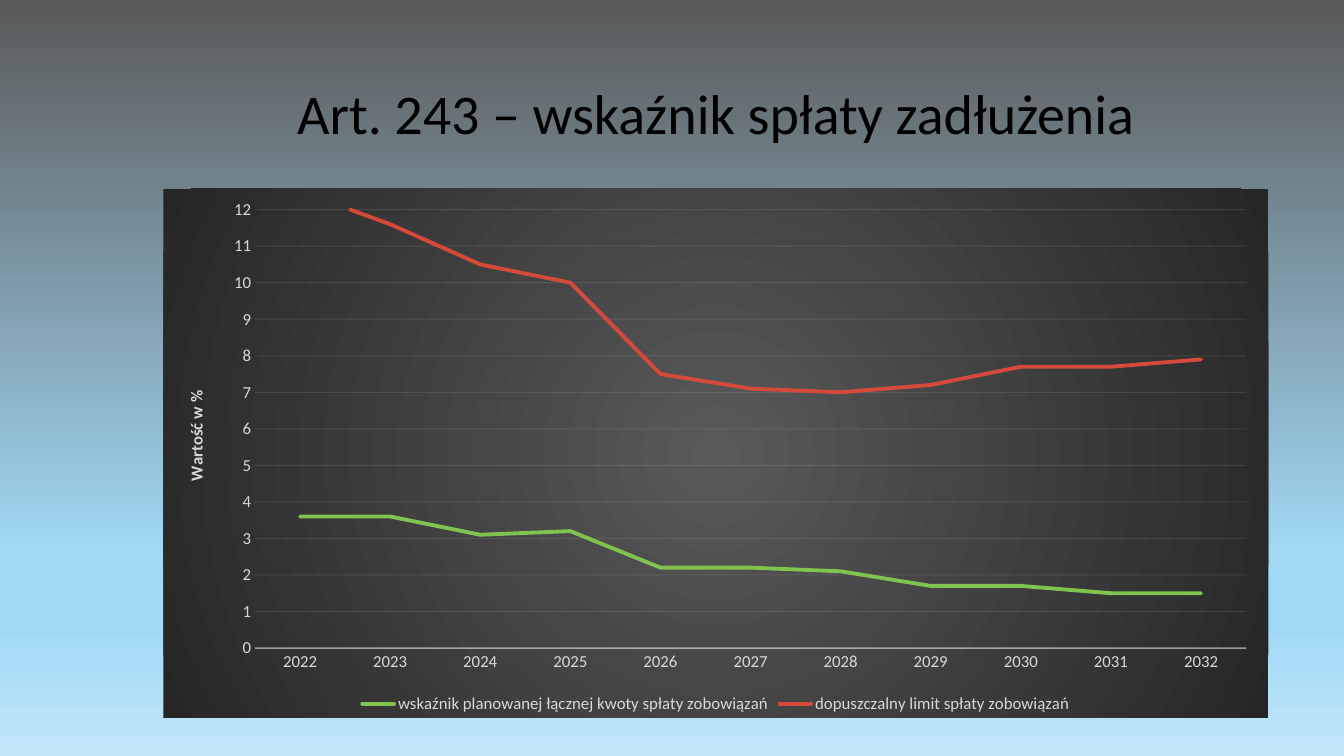
import copy
import lxml.etree
import pptx
import pptx.chart.axis
import pptx.chart.data
import pptx.dml.color
import pptx.enum.chart
import pptx.enum.text
import pptx.oxml
import pptx.oxml.ns
import pptx.util

Inches, Pt = pptx.util.Inches, pptx.util.Pt
qn = pptx.oxml.ns.qn
FONT = "Calibri"
COLORS = {
    "title": "000000", "label": "D9D9D9", "rule": "F2F2F2",
    "plan": "80C34F", "limit": "D64A3B",
    "dark": "595959", "black": "262626", "sky": "A2DAF6", "pale": "C1E6F9",
}
YEARS = [str(year) for year in range(2022, 2033)]
SERIES = [
    ("wskaźnik planowanej łącznej kwoty spłaty zobowiązań", "plan",
     (3.6, 3.6, 3.1, 3.2, 2.2, 2.2, 2.1, 1.7, 1.7, 1.5, 1.5)),
    ("dopuszczalny limit spłaty zobowiązań", "limit",
     (8.9, 8, 7.4, 6.8, 5.3, 4.9, 4.9, 5.5, 6, 6.2, 6.4)),
]


def rgb(name):
    return pptx.dml.color.RGBColor.from_string(COLORS[name])


def style(font, size, color, bold=False):
    font.name, font.size, font.bold = FONT, Pt(size), bold
    font.color.rgb = rgb(color)


def grad(stops, shade):
    """Gradient fill element from (percent, color) stops."""
    marks = "".join(f'<a:gs pos="{pos * 1000}"><a:srgbClr val="{COLORS[name]}"/></a:gs>'
                    for pos, name in stops)
    return pptx.oxml.parse_xml(
        f'<a:gradFill {pptx.oxml.ns.nsdecls("a")} rotWithShape="1">'
        f'<a:gsLst>{marks}</a:gsLst>{shade}</a:gradFill>')


def rule(line, width, alpha):
    """Pale line with the given opacity in percent."""
    line.width = Pt(width)
    line.color.rgb = rgb("rule")
    tint = next(line.fill._xPr.iter(qn("a:srgbClr")))
    lxml.etree.SubElement(tint, qn("a:alpha"), val=str(alpha * 1000))


def backdrop(slide):
    fill = slide.background.fill
    fill.gradient()
    old = next(slide.element.iter(qn("a:gradFill")))
    stops = [(0, "dark"), (74, "sky"), (83, "sky"), (100, "pale")]
    old.getparent().replace(old, grad(stops, '<a:lin ang="5400000" scaled="0"/>'))


def title(slide, box):
    frame = slide.shapes.add_textbox(*box).text_frame
    frame.word_wrap = True
    frame.vertical_anchor = pptx.enum.text.MSO_ANCHOR.MIDDLE
    para = frame.paragraphs[0]
    para.alignment = pptx.enum.text.PP_ALIGN.CENTER
    run = para.add_run()
    run.text = "Art. 243 – wskaźnik spłaty zadłużenia"
    style(run.font, 40, "title")


def second(chart):
    """Move the last series to a hidden second pair of axes."""
    area = chart._chartSpace.chart.plotArea
    first = area.find(qn("c:lineChart"))
    extra = copy.deepcopy(first)
    first.remove(first.findall(qn("c:ser"))[1])
    extra.remove(extra.findall(qn("c:ser"))[0])
    first.addnext(extra)
    pair = [copy.deepcopy(area.find(qn(tag))) for tag in ("c:catAx", "c:valAx")]
    area.findall(qn("c:valAx"))[-1].addnext(pair[0])
    pair[0].addnext(pair[1])
    ids = {}
    for num, axis in enumerate(pair):
        ids[axis.find(qn("c:axId")).get("val")] = str(5001 + num)
    for part in [extra] + pair:
        for tag in ("c:axId", "c:crossAx"):
            for ref in part.findall(qn(tag)):
                ref.set("val", ids[ref.get("val")])
    right = pptx.chart.axis.ValueAxis(pair[1])
    right.maximum_scale, right.major_unit = 16, 1
    right.has_major_gridlines = False
    pair[1].find(qn("c:axPos")).set("val", "r")
    pair[1].find(qn("c:crosses")).set("val", "max")
    for axis in (right, pptx.chart.axis.CategoryAxis(pair[0])):
        axis.visible = False


def layout(chart, **sides):
    """Place the inner plot area by fractions of the chart."""
    area = chart._chartSpace.chart.plotArea
    for old in area.findall(qn("c:layout")):
        area.remove(old)
    parts = '<c:layoutTarget val="inner"/><c:xMode val="edge"/><c:yMode val="edge"/>'
    parts += "".join(f'<c:{key} val="{val:.4f}"/>' for key, val in sides.items())
    area.insert(0, pptx.oxml.parse_xml(
        f'<c:layout {pptx.oxml.ns.nsdecls("c")}>'
        f'<c:manualLayout>{parts}</c:manualLayout></c:layout>'))


def panel(chart):
    """Dark radial fill behind the whole chart."""
    props = pptx.oxml.parse_xml(f'<c:spPr {pptx.oxml.ns.nsdecls("c", "a")}>'
                                '<a:ln><a:noFill/></a:ln></c:spPr>')
    shade = ('<a:path path="circle">'
             '<a:fillToRect l="50000" t="50000" r="50000" b="50000"/></a:path>')
    props.insert(0, grad([(0, "dark"), (100, "black")], shade))
    chart._chartSpace.chart.addnext(props)


def graph(slide, box):
    data = pptx.chart.data.CategoryChartData()
    data.categories = YEARS
    for name, _, vals in SERIES:
        data.add_series(name, vals)
    kind = pptx.enum.chart.XL_CHART_TYPE.LINE_STACKED
    chart = slide.shapes.add_chart(kind, *box, data).chart
    chart.has_title = False
    style(chart.font, 10, "title")
    # The main axes are taken before the second pair joins them
    cat, val = chart.category_axis, chart.value_axis
    second(chart)
    panel(chart)
    wide, high = box[2], box[3]
    layout(chart, x=Inches(0.91) / wide, y=Inches(0.21) / high,
           w=Inches(9.83) / wide, h=Inches(4.35) / high)

    # Lines
    rows = [row for plot in chart.plots for row in plot.series]
    for row, (_, color, _) in zip(rows, SERIES):
        row.smooth = False
        row.format.line.width = Pt(2.75)
        row.format.line.color.rgb = rgb(color)
        row.format.line.fill._xPr.set("cap", "rnd")
        row.marker.style = pptx.enum.chart.XL_MARKER_STYLE.NONE

    # Axes
    for axis in (cat, val):
        axis.major_tick_mark = pptx.enum.chart.XL_TICK_MARK.NONE
        axis.minor_tick_mark = pptx.enum.chart.XL_TICK_MARK.NONE
        style(axis.tick_labels.font, 12, "label")
    rule(cat.format.line, 1, 54)
    val.format.line.fill.background()
    val.minimum_scale, val.maximum_scale, val.major_unit = 0, 12, 1
    val.has_major_gridlines = True
    rule(val.major_gridlines.format.line, 0.75, 10)
    run = val.axis_title.text_frame.paragraphs[0].add_run()
    run.text = "Wartość w %"
    style(run.font, 12, "label", True)

    # Legend
    chart.has_legend = True
    chart.legend.position = pptx.enum.chart.XL_LEGEND_POSITION.BOTTOM
    chart.legend.include_in_layout = False
    style(chart.legend.font, 12, "label")


def main():
    deck = pptx.Presentation()
    deck.slide_width, deck.slide_height = Inches(13.33), Inches(7.5)
    slide = deck.slides.add_slide(deck.slide_layouts[6])
    left, width = Inches(1.62), Inches(10.96)
    backdrop(slide)
    title(slide, (left, Inches(0.28), width, Inches(1.67)))
    graph(slide, (left, Inches(1.87), width, Inches(5.25)))
    deck.save("out.pptx")


if __name__ == "__main__":
    main()
